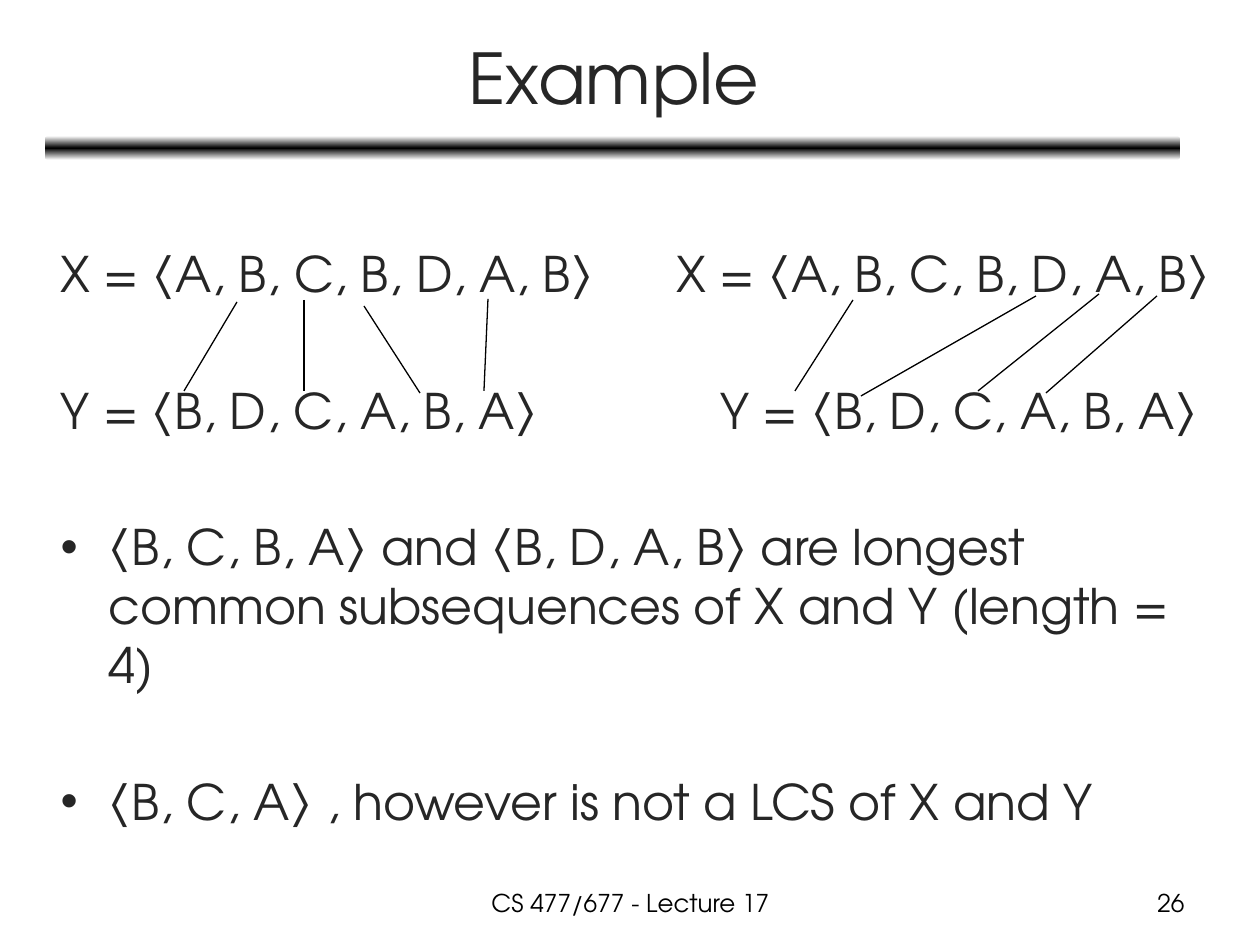
import pptx
import pptx.util
import pptx.dml.color
import pptx.enum.shapes
import pptx.enum.text
import pptx.oxml.ns
import copy
import lxml.etree

PX = 914400 // 126
FONT = "TeX Gyre Adventor"
INK, BLACK, WHITE = "262626", "000000", "FFFFFF"
ALIGN = pptx.enum.text.PP_ALIGN
ANCHOR = pptx.enum.text.MSO_ANCHOR
INDENT = 48
PARAGRAPH_GAP = 44.5
BODY_TOP = 237
ROW_PITCH = 137

TITLE = "Example"
FOOTER = "CS 477/677 - Lecture 17"
NUMBER = "26"
SEQUENCES = ["X = ⟨A, B, C, B, D, A, B⟩", "Y = ⟨B, D, C, A, B, A⟩"]
RIGHT_COLUMN = [(664, 560), (708, 510)]
REMARKS = [
    "⟨B, C, B, A⟩ and ⟨B, D, A, B⟩ are longest common subsequences of X and Y (length = 4)",
    "⟨B, C, A⟩ , however is not a LCS of X and Y",
]
MATCHES = [
    (237, 302, 184, 391), (304, 300, 304, 391),
    (364, 306, 420, 393), (488, 299, 484, 391),
    (853, 300, 795, 391), (1036, 296, 861, 396),
    (1099, 294, 978, 391), (1157, 296, 1046, 393),
]


def color(value):
    return pptx.dml.color.RGBColor.from_string(value)


def px(*values):
    return [pptx.util.Emu(value * PX) for value in values]


def add_child(parent, tag, **attributes):
    child = lxml.etree.SubElement(parent, pptx.oxml.ns.qn(tag))
    for name, value in attributes.items():
        child.set(name, value)


def write(para, text, size=28, ink=INK, align=ALIGN.LEFT, before=0, bullet=None):
    properties = para._p.get_or_add_pPr()
    indent = INDENT * PX if bullet else 0
    properties.set("marL", str(indent))
    properties.set("indent", str(-indent))
    if bullet:
        add_child(properties, "a:buChar", char=bullet)
    else:
        add_child(properties, "a:buNone")
    para.alignment = align
    para.space_before = pptx.util.Pt(before)
    span = para.add_run()
    span.text = text
    span.font.name = FONT
    span.font.size = pptx.util.Pt(size)
    span.font.color.rgb = color(ink)


def place(box, left, top, width, height, anchor=ANCHOR.TOP):
    box.left, box.top, box.width, box.height = px(left, top, width, height)
    frame = box.text_frame
    frame.word_wrap = True
    frame.auto_size = pptx.enum.text.MSO_AUTO_SIZE.NONE
    frame.vertical_anchor = anchor
    return frame


def add_rule(page):
    rule = page.shapes.add_shape(
        pptx.enum.shapes.MSO_SHAPE.ROUNDED_RECTANGLE, *px(45, 136, 1135, 24))
    rule.shadow.inherit = False
    rule.line.fill.background()
    rule.fill.gradient()
    rule.fill.gradient_angle = 90
    stops = rule._element.spPr.find(".//" + pptx.oxml.ns.qn("a:gsLst"))
    stops.insert(1, copy.deepcopy(stops[0]))
    for stop, ink, position in zip(rule.fill.gradient_stops, (WHITE, BLACK, WHITE), (0, 0.5, 1)):
        stop.color.rgb = color(ink)
        stop.position = position


def add_match(page, ends):
    line = page.shapes.add_connector(pptx.enum.shapes.MSO_CONNECTOR.STRAIGHT, *px(*ends))
    line.line.color.rgb = color(BLACK)
    line.line.width = pptx.util.Pt(0.75)
    add_child(line._element.spPr, "a:effectLst")


def add_label(page, text, bounds, **style):
    box = page.shapes.add_textbox(*px(*bounds))
    write(place(box, *bounds).paragraphs[0], text, **style)


def main():
    deck = pptx.Presentation()
    deck.slide_width, deck.slide_height = px(1260, 945)
    page = deck.slides.add_slide(deck.slide_layouts[1])
    add_rule(page)
    add_label(page, FOOTER, (431, 882, 399, 44), size=14, ink=BLACK, align=ALIGN.CENTER)
    title = place(page.shapes.title, 47, 14, 1134, 125, ANCHOR.MIDDLE)
    write(title.paragraphs[0], TITLE, size=40, align=ALIGN.CENTER)
    body = place(page.placeholders[1], 48, BODY_TOP, 1188, 660)
    for index, text in enumerate(SEQUENCES + REMARKS):
        para = body.add_paragraph() if index else body.paragraphs[0]
        write(para, text, before=PARAGRAPH_GAP if index else 0,
              bullet="•" if text in REMARKS else None)
    for row, (text, (left, width)) in enumerate(zip(SEQUENCES, RIGHT_COLUMN)):
        add_label(page, text, (left, BODY_TOP + row * ROW_PITCH, width, 72))
    for ends in MATCHES:
        add_match(page, ends)
    add_label(page, NUMBER, (903, 882, 294, 44), size=14, ink=BLACK, align=ALIGN.RIGHT)
    deck.save("out.pptx")


if __name__ == "__main__":
    main()
